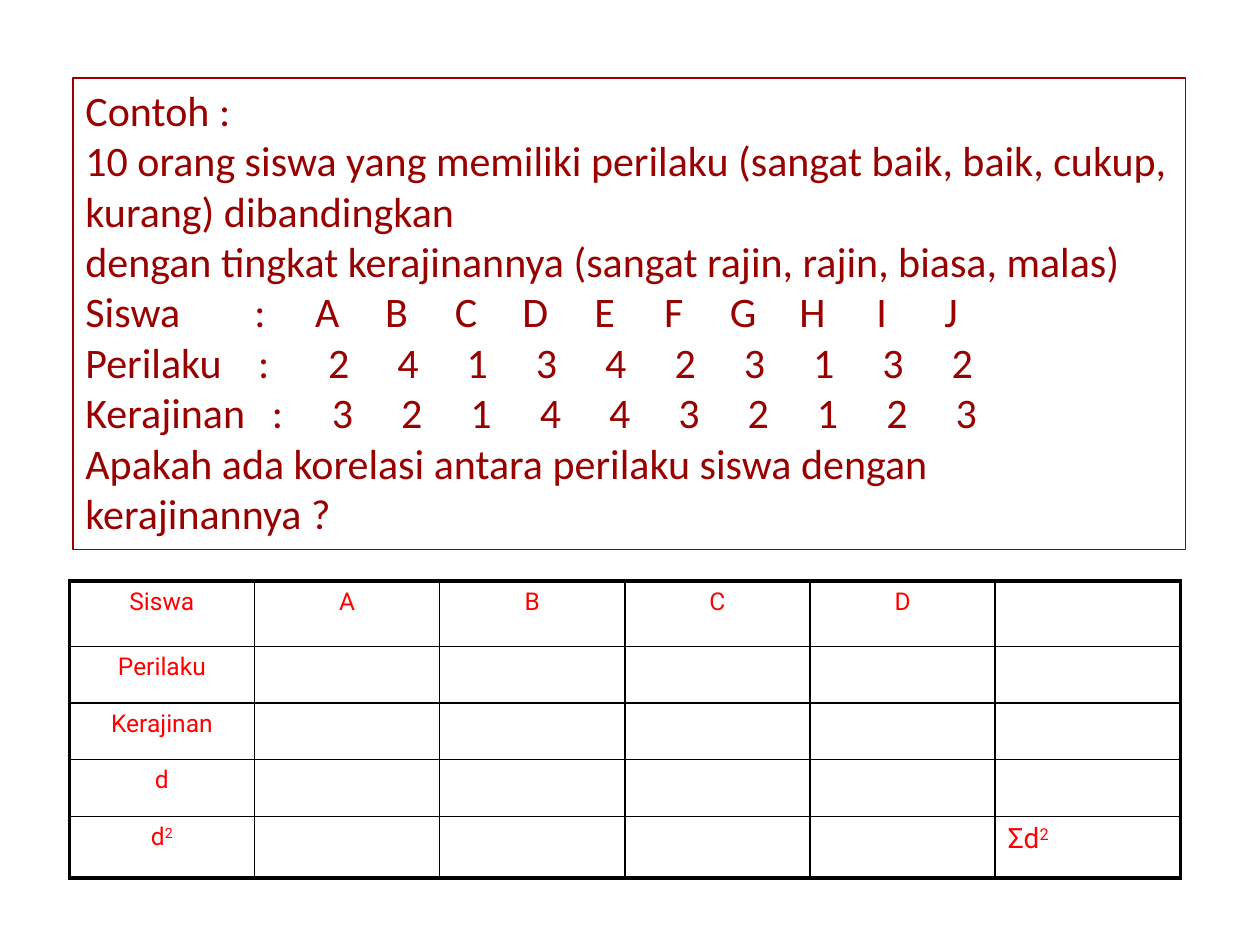
"""Build the rank-correlation example slide with its worksheet table."""
from lxml.etree import SubElement
from pptx import Presentation
from pptx.dml.color import RGBColor
from pptx.enum.shapes import MSO_SHAPE
from pptx.enum.text import MSO_ANCHOR, PP_ALIGN
from pptx.oxml.ns import qn
from pptx.util import Inches, Pt

INTRO = [
    "Contoh :",
    "10 orang siswa yang memiliki perilaku (sangat baik, baik, cukup, kurang) dibandingkan",
    "dengan tingkat kerajinannya (sangat rajin, rajin, biasa, malas)",
]
SCORES = [
    ("Siswa", "ABCDEFGHIJ", 1.34, 1.92),
    ("Perilaku", "2413423132", 1.37, 2.01),
    ("Kerajinan", "3214432123", 1.48, 2.04),
]
QUESTION = "Apakah ada korelasi antara perilaku siswa dengan kerajinannya ?"
WORKSHEET = [
    ["Siswa", "A", "B", "C", "D", ""],
    ["Perilaku"] + [""] * 5,
    ["Kerajinan"] + [""] * 5,
    ["d"] + [""] * 5,
    ["d²", "", "", "", "", "Σd²"],
]
ROW_HEIGHTS = [0.52, 0.45, 0.45, 0.45, 0.49]
COLUMN_WIDTH = 1.47
SCORE_STEP = 0.55

THEME = {
    "example": {"name": "Calibri", "size": Pt(24), "color": RGBColor(0x99, 0, 0)},
    "label": {"name": "Roboto", "size": Pt(14), "color": RGBColor(0xFF, 0, 0)},
    "sum": {"name": "Roboto", "size": Pt(16), "color": RGBColor(0xFF, 0, 0)},
    "border": "000000",
    "thin": Pt(1),
    "thick": Pt(2.25),
}
EXAMPLE_FRAME = {"word_wrap": True, "vertical_anchor": MSO_ANCHOR.TOP}
PLAIN_TABLE = {"first_row": False, "horz_banding": False}


def apply(target, values):
    for attribute, value in values.items():
        setattr(target, attribute, value)


def add_run(paragraph, wording, style):
    run = paragraph.add_run()
    run.text = wording
    apply(run.font, {key: style[key] for key in ("name", "size")})
    run.font.color.rgb = style["color"]
    return run


def add_tab_stops(paragraph, colon, first_score, count):
    stops = SubElement(paragraph._p.get_or_add_pPr(), qn("a:tabLst"))
    scores = [(first_score + SCORE_STEP * i, "ctr") for i in range(count)]
    for position, alignment in [(colon, "l")] + scores:
        SubElement(stops, qn("a:tab"), pos=str(Inches(position)), algn=alignment)


def add_example(slide):
    example = slide.shapes.add_shape(
        MSO_SHAPE.RECTANGLE, Inches(0.58), Inches(0.62), Inches(8.83), Inches(3.74))
    example.shadow.inherit = False
    example.fill.background()
    example.line.color.rgb = THEME["example"]["color"]
    example.line.width = Pt(0.75)
    frame = example.text_frame
    apply(frame, EXAMPLE_FRAME)
    score_lines = ["\t".join([label, ":", *scores]) for label, scores, _, _ in SCORES]
    for index, wording in enumerate(INTRO + score_lines + [QUESTION]):
        paragraph = frame.add_paragraph() if index else frame.paragraphs[0]
        paragraph.alignment = PP_ALIGN.LEFT
        add_run(paragraph, wording, THEME["example"])
    for paragraph, (_, scores, colon, first) in zip(frame.paragraphs[len(INTRO):], SCORES):
        add_tab_stops(paragraph, colon, first, len(scores))


def add_borders(cell, outer_sides):
    properties = cell._tc.get_or_add_tcPr()
    for side, is_outer in outer_sides.items():
        width = THEME["thick" if is_outer else "thin"]
        line = SubElement(properties, qn(f"a:ln{side}"), w=str(width))
        SubElement(SubElement(line, qn("a:solidFill")), qn("a:srgbClr"), val=THEME["border"])


def fill_cell(cell, wording):
    is_sum = wording.startswith("Σ")
    style = THEME["sum" if is_sum else "label"]
    paragraph = cell.text_frame.paragraphs[0]
    apply(paragraph, {"alignment": PP_ALIGN.LEFT if is_sum else PP_ALIGN.CENTER,
                      "space_before": Pt(3)})
    add_run(paragraph, wording.rstrip("²"), style)
    if wording.endswith("²"):
        exponent = add_run(paragraph, "2", style)
        exponent.font._element.set("baseline", "30000")


def add_worksheet(slide):
    row_count, column_count = len(WORKSHEET), len(WORKSHEET[0])
    worksheet = slide.shapes.add_table(
        row_count, column_count, Inches(0.55), Inches(4.61),
        Inches(COLUMN_WIDTH * column_count), Inches(sum(ROW_HEIGHTS))).table
    apply(worksheet, PLAIN_TABLE)
    for column in worksheet.columns:
        column.width = Inches(COLUMN_WIDTH)
    for r, (height, wordings) in enumerate(zip(ROW_HEIGHTS, WORKSHEET)):
        worksheet.rows[r].height = Inches(height)
        for c, wording in enumerate(wordings):
            cell = worksheet.cell(r, c)
            add_borders(cell, {"L": c == 0, "R": c == column_count - 1,
                               "T": r == 0, "B": r == row_count - 1})
            cell.fill.background()
            if wording:
                fill_cell(cell, wording)


def main():
    deck = Presentation()
    apply(deck, {"slide_width": Inches(10), "slide_height": Inches(7.5)})
    slide = deck.slides.add_slide(deck.slide_layouts[6])
    add_example(slide)
    add_worksheet(slide)
    deck.save("out.pptx")


if __name__ == "__main__":
    main()
